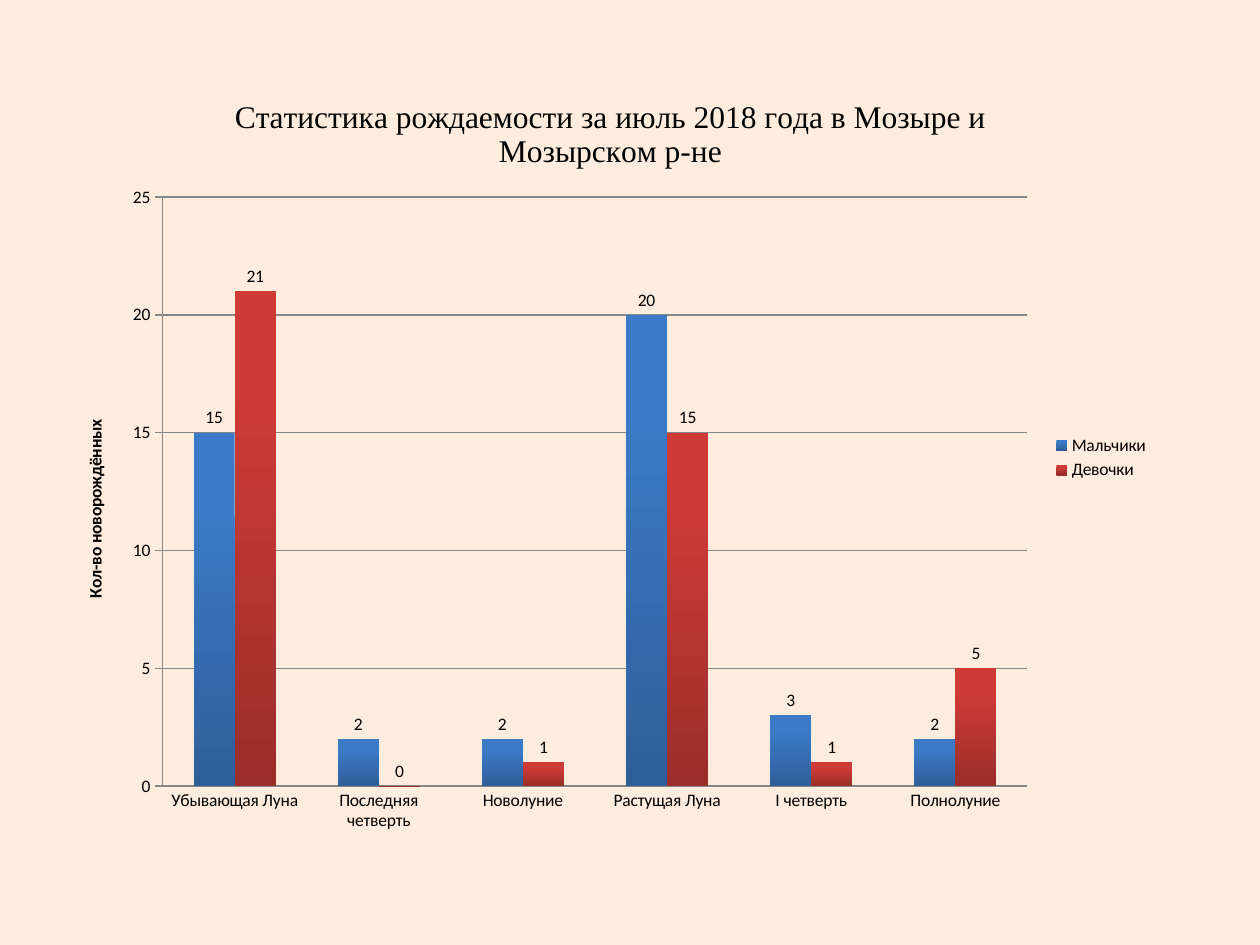
from lxml.etree import SubElement
from pptx import Presentation
from pptx.chart.data import CategoryChartData
from pptx.dml.color import RGBColor
from pptx.enum.chart import (XL_CHART_TYPE, XL_LABEL_POSITION,
                             XL_LEGEND_POSITION, XL_TICK_MARK)
from pptx.oxml.ns import qn
from pptx.util import Pt

SCALE = 914400 / 126
COLORS = {"back": "FEEDDF", "text": "000000", "line": "868686"}
BARS = {
    "Мальчики": ([15, 2, 2, 20, 3, 2], "3C7AC7", "2E5F99"),
    "Девочки": ([21, 0, 1, 15, 1, 5], "CE3B37", "9B2D2A"),
}
PHASES = ["Убывающая Луна", "Последняя четверть", "Новолуние",
          "Растущая Луна", "I четверть", "Полнолуние"]
FRAME = (59, 69, 1103, 777)
PLOT = (163, 197, 865, 589)


def px(n):
    return round(n * SCALE)


def rgb(name):
    return RGBColor.from_string(COLORS.get(name, name))


def style(font, size=10, bold=False, face="Calibri", color="text"):
    font.size, font.bold, font.name = Pt(size), bold, face
    font.color.rgb = rgb(color)


def write(frame, text, **form):
    run = frame.paragraphs[0].add_run()
    run.text = text
    style(run.font, **form)


def rule(line):
    line.color.rgb = rgb("line")
    line.width = Pt(0.75)


def place_plot(chart):
    """Fix the inner plot area at PLOT, as fractions of FRAME."""
    area = chart._chartSpace.chart.plotArea
    layout = area.find(qn("c:layout"))
    if layout is None:
        layout = SubElement(area, qn("c:layout"))
        area.insert(0, layout)
    left, top, width, height = FRAME
    x, y, w, h = PLOT
    parts = {"layoutTarget": "inner", "xMode": "edge", "yMode": "edge",
             "x": round((x - left) / width, 3),
             "y": round((y - top) / height, 3),
             "w": round(w / width, 3), "h": round(h / height, 3)}
    box = SubElement(layout, qn("c:manualLayout"))
    for tag, val in parts.items():
        SubElement(box, qn(f"c:{tag}")).set("val", str(val))


def add_bars(slide):
    data = CategoryChartData()
    data.categories = PHASES
    for name, (vals, _, _) in BARS.items():
        data.add_series(name, vals)
    kind = XL_CHART_TYPE.COLUMN_CLUSTERED
    chart = slide.shapes.add_chart(kind, *map(px, FRAME), data).chart
    style(chart.font)
    place_plot(chart)
    return chart


def paint_bars(plot):
    plot.gap_width, plot.overlap = 150, 0
    plot.vary_by_categories = False
    for row in plot.series:
        _, light, dark = BARS[row.name]
        fill = row.format.fill
        fill.gradient()
        fill.gradient_angle = 270
        for stop, pos, color in zip(fill.gradient_stops, (0.2, 1), (light, dark)):
            stop.position = pos
            stop.color.rgb = rgb(color)
        row.invert_if_negative = False
        tags = row.data_labels
        tags.show_value = True
        tags.position = XL_LABEL_POSITION.OUTSIDE_END
        style(tags.font)


def set_axes(chart):
    cat, val = chart.category_axis, chart.value_axis
    cat.major_tick_mark = XL_TICK_MARK.NONE
    val.major_tick_mark = XL_TICK_MARK.CROSS
    val.minimum_scale, val.maximum_scale, val.major_unit = 0, 25, 5
    rule(val.major_gridlines.format.line)
    for axis in (cat, val):
        rule(axis.format.line)
        style(axis.tick_labels.font)
    write(val.axis_title.text_frame, "Кол-во новорождённых", bold=True)


def set_legend(chart):
    chart.has_legend = True
    chart.legend.position = XL_LEGEND_POSITION.RIGHT
    chart.legend.include_in_layout = False
    style(chart.legend.font)


def main():
    deck = Presentation()
    deck.slide_width, deck.slide_height = px(1260), px(945)
    slide = deck.slides.add_slide(deck.slide_layouts[6])
    back = slide.background.fill
    back.solid()
    back.fore_color.rgb = rgb("back")
    chart = add_bars(slide)
    write(chart.chart_title.text_frame,
          "Статистика рождаемости за июль 2018 года в Мозыре и Мозырском р-не",
          size=18, face="Times New Roman")
    paint_bars(chart.plots[0])
    set_axes(chart)
    set_legend(chart)
    deck.save("out.pptx")


if __name__ == "__main__":
    main()
